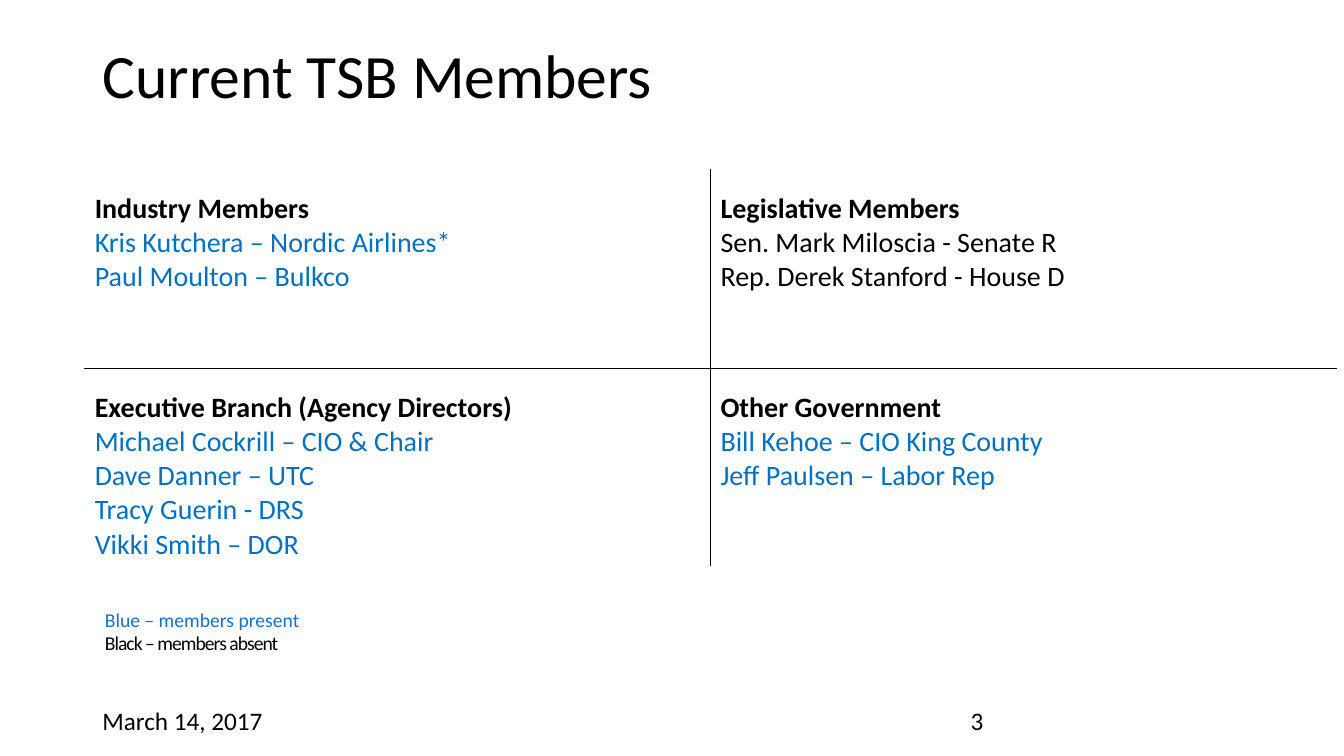
"""Build the slide that lists the current board members by group."""
from lxml import etree
from pptx import Presentation
from pptx import util as u
from pptx.dml import color as c
from pptx.enum import text
from pptx.oxml import ns

COLORS = {"black": "000000", "present": "0070C0", "legend": "1771CB", "white": "FFFFFF"}

MEMBERS = [
    [
        ("Industry Members", "present",
         ["Kris Kutchera – Nordic Airlines*", "Paul Moulton – Bulkco"]),
        ("Legislative Members", "black",
         ["Sen. Mark Miloscia - Senate R", "Rep. Derek Stanford - House D"]),
    ],
    [
        ("Executive Branch (Agency Directors)", "present",
         ["Michael Cockrill – CIO & Chair", "Dave Danner – UTC",
          "Tracy Guerin - DRS", "Vikki Smith – DOR"]),
        ("Other Government", "present",
         ["Bill Kehoe – CIO King County", "Jeff Paulsen – Labor Rep"]),
    ],
]


class SlideBuilder:
    """Hold the font and the current page, and add elements to it."""

    def __init__(self, page, font="Calibri"):
        self.page = page
        self.font = font

    def add_span(self, para, words, size, color="black", bold=False, spacing=None):
        """Add one formatted run to a paragraph."""
        span = para.add_run()
        span.text = words
        span.font.name = self.font
        span.font.size = u.Pt(size)
        span.font.bold = bold
        span.font.color.rgb = c.RGBColor.from_string(COLORS[color])
        if spacing is not None:
            span._r.get_or_add_rPr().set("spc", str(round(spacing * 100)))

    def title(self, words, left, top, width, height):
        """Place and fill the title placeholder."""
        box = self.page.shapes.title
        box.left, box.top, box.width, box.height = map(u.Pt, (left, top, width, height))
        frame = box.text_frame
        frame.auto_size = text.MSO_AUTO_SIZE.NONE
        frame.vertical_anchor = text.MSO_ANCHOR.TOP
        para = frame.paragraphs[0]
        para.alignment = text.PP_ALIGN.LEFT
        para.line_spacing = 0.9
        self.add_span(para, words, 44)

    def text_box(self, left, top, width, height, wrap=True):
        """Add an empty text box and return its frame."""
        box = self.page.shapes.add_textbox(*map(u.Pt, (left, top, width, height)))
        box.text_frame.word_wrap = wrap
        return box.text_frame

    def label(self, words, left, top, width, height):
        """Add a single line of footer text."""
        frame = self.text_box(left, top, width, height)
        self.add_span(frame.paragraphs[0], words, 18)

    def legend(self, left, top, width, height):
        """Add the key to the name colours."""
        frame = self.text_box(left, top, width, height, wrap=False)
        frame.margin_left = frame.margin_right = u.Pt(14.4)
        frame.margin_top = frame.margin_bottom = u.Pt(11.5)
        self.add_span(frame.paragraphs[0], "Blue – members present", 14, "legend")
        para = frame.add_paragraph()
        para.space_after = u.Pt(6)
        self.add_span(para, "Black – members absent", 14, spacing=-0.7)

    def borders(self, cell, colors):
        """Draw the left, right, top and bottom borders of a cell."""
        properties = cell._tc.get_or_add_tcPr()
        for index, (side, color) in enumerate(zip("LRTB", colors)):
            line = etree.Element(ns.qn(f"a:ln{side}"), w=str(u.Pt(1)))
            fill = etree.SubElement(line, ns.qn("a:solidFill"))
            etree.SubElement(fill, ns.qn("a:srgbClr"), val=COLORS[color])
            properties.insert(index, line)

    def member_table(self, groups, left, top, width, height):
        """Add the grid of groups, ruled only between its cells."""
        rows, columns = len(groups), len(groups[0])
        table = self.page.shapes.add_table(
            rows, columns, *map(u.Pt, (left, top, width, height))).table
        table.first_row = table.horz_banding = False
        for row, line in enumerate(groups):
            for column, (heading, color, names) in enumerate(line):
                cell = table.cell(row, column)
                cell.fill.background()
                outer = (column == 0, column == columns - 1, row == 0, row == rows - 1)
                self.borders(cell, ["white" if edge else "black" for edge in outer])
                para = cell.text_frame.paragraphs[0]
                para.line_spacing = 1.5
                self.add_span(para, heading, 20, bold=True)
                for name in names:
                    self.add_span(cell.text_frame.add_paragraph(), name, 20, color)


def main():
    """Assemble and save the deck."""
    deck = Presentation()
    deck.slide_width, deck.slide_height = u.Pt(960), u.Pt(540)
    builder = SlideBuilder(deck.slides.add_slide(deck.slide_layouts.get_by_name("Title Only")))
    builder.title("Current TSB Members", 66, 28.8, 828, 104.4)
    builder.legend(60.5, 422.6, 183.6, 56.2)
    builder.member_table(MEMBERS, 60.5, 121, 894, 284)
    builder.label("March 14, 2017", 66, 500.4, 216, 28.8)
    builder.label("3", 686.2, 500.4, 68.4, 28.8)
    deck.save("out.pptx")


if __name__ == "__main__":
    main()
